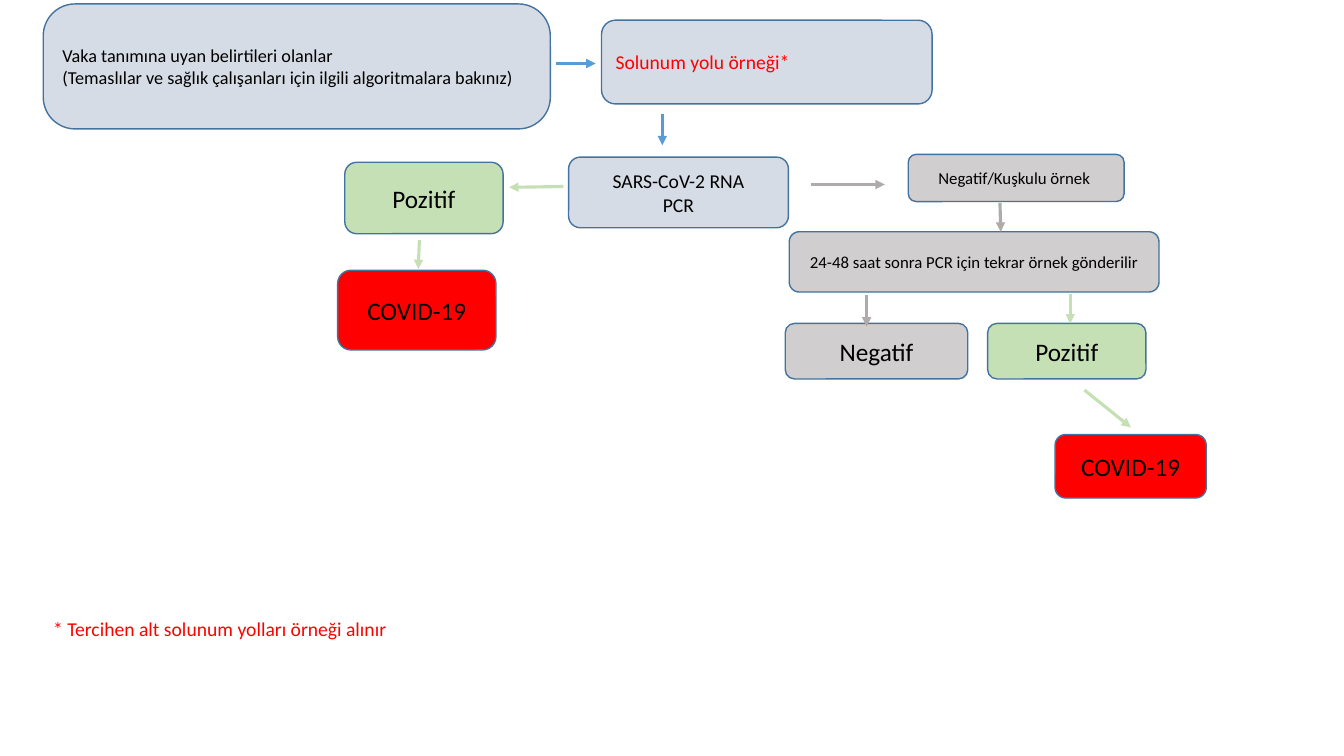
from lxml import etree
from pptx import Presentation
from pptx.dml.color import RGBColor
from pptx.enum.shapes import MSO_CONNECTOR, MSO_SHAPE
from pptx.enum.text import MSO_ANCHOR, MSO_AUTO_SIZE, PP_ALIGN
from pptx.oxml.ns import qn
from pptx.util import Cm, Pt

FONT = "Calibri"
BLACK, RED, OUTLINE = "000000", "FF0000", "43739E"
PALE_BLUE, GREEN, GREY = "D6DCE5", "C5E0B4", "D0CECE"
BLUE_ARROW, GREY_ARROW = "5B9BD5", "AFABAB"
LEFT, CENTER = PP_ALIGN.LEFT, PP_ALIGN.CENTER

# Boxes: lines, (left, top, width, height) in cm, fill, size, text colour, alignment
BOXES = [
    (["Vaka tanımına uyan belirtileri olanlar",
      "(Temaslılar ve sağlık çalışanları için ilgili algoritmalara bakınız)"],
     (1.09, 0.1, 12.78, 3.15), PALE_BLUE, 13, BLACK, LEFT),
    (["Solunum yolu örneği*"], (15.16, 0.51, 8.33, 2.11), PALE_BLUE, 14, RED, LEFT),
    (["SARS-CoV-2 RNA", "PCR"], (14.33, 3.96, 5.54, 1.78), PALE_BLUE, 14, BLACK, CENTER),
    (["Pozitif"], (8.69, 4.09, 3.99, 1.8), GREEN, 18, BLACK, CENTER),
    (["COVID-19"], (8.51, 6.81, 3.99, 2.01), RED, 18, BLACK, CENTER),
    (["Negatif/Kuşkulu örnek "], (22.89, 3.89, 5.44, 1.19), GREY, 12, BLACK, CENTER),
    (["24-48 saat sonra PCR için tekrar örnek gönderilir"],
     (19.89, 5.84, 9.32, 1.52), GREY, 12, BLACK, CENTER),
    (["Negatif"], (19.79, 8.15, 4.6, 1.4), GREY, 18, BLACK, CENTER),
    (["Pozitif"], (24.89, 8.15, 3.99, 1.4), GREEN, 18, BLACK, CENTER),
    (["COVID-19"], (26.59, 10.95, 3.81, 1.6), RED, 18, BLACK, CENTER),
]
CASE_ROUNDING = 0.255  # the first box has rounder corners

# Arrows: (start x, start y, end x, end y) in cm, colour
ARROWS = [
    ((14.02, 1.6, 15.01, 1.6), BLUE_ARROW),
    ((16.69, 2.87, 16.69, 3.66), BLUE_ARROW),
    ((14.2, 4.7, 12.83, 4.72), GREEN),
    ((10.57, 6.05, 10.54, 6.78), GREEN),
    ((20.45, 4.65, 22.3, 4.65), GREY_ARROW),
    ((25.2, 5.11, 25.22, 5.84), GREY_ARROW),
    ((21.84, 7.44, 21.84, 8.23), GREY_ARROW),
    ((26.97, 7.42, 26.97, 8.15), GREEN),
    ((27.33, 9.83, 28.5, 10.77), GREEN),
]

FOOTNOTE = ["* Tercihen alt solunum yolları örneği alınır"]
FOOTNOTE_AT = (1.09, 15.42, 9.22, 0.86)


def rgb(value):
    return RGBColor.from_string(value)


def cm(lengths):
    return [Cm(v) for v in lengths]


def write(tf, lines, size, color, align):
    tf.word_wrap = True
    for i, line in enumerate(lines):
        p = tf.paragraphs[0] if i == 0 else tf.add_paragraph()
        p.alignment = align
        r = p.add_run()
        r.text = line
        r.font.name = FONT
        r.font.size = Pt(size)
        r.font.color.rgb = rgb(color)


def add_box(slide, lines, at, fill, size, color, align):
    sp = slide.shapes.add_shape(MSO_SHAPE.ROUNDED_RECTANGLE, *cm(at))
    sp.shadow.inherit = False
    sp.fill.solid()
    sp.fill.fore_color.rgb = rgb(fill)
    sp.line.color.rgb = rgb(OUTLINE)
    sp.line.width = Pt(1)
    sp.text_frame.vertical_anchor = MSO_ANCHOR.MIDDLE
    write(sp.text_frame, lines, size, color, align)
    return sp


def add_arrow(slide, ends, color):
    line = slide.shapes.add_connector(MSO_CONNECTOR.STRAIGHT, *cm(ends))
    line.line.color.rgb = rgb(color)
    line.line.width = Pt(2.25)
    etree.SubElement(line.line._get_or_add_ln(), qn("a:tailEnd"), type="triangle")
    etree.SubElement(line._element.spPr, qn("a:effectLst"))


def main():
    prs = Presentation()
    prs.slide_width, prs.slide_height = Cm(33.87), Cm(19.05)
    slide = prs.slides.add_slide(prs.slide_layouts[6])

    # Flow chart
    boxes = [add_box(slide, *box) for box in BOXES]
    boxes[0].adjustments[0] = CASE_ROUNDING
    for ends, color in ARROWS:
        add_arrow(slide, ends, color)

    # Footnote
    tf = slide.shapes.add_textbox(*cm(FOOTNOTE_AT)).text_frame
    write(tf, FOOTNOTE, 14, RED, LEFT)
    tf.auto_size = MSO_AUTO_SIZE.SHAPE_TO_FIT_TEXT

    prs.save("out.pptx")


if __name__ == "__main__":
    main()
